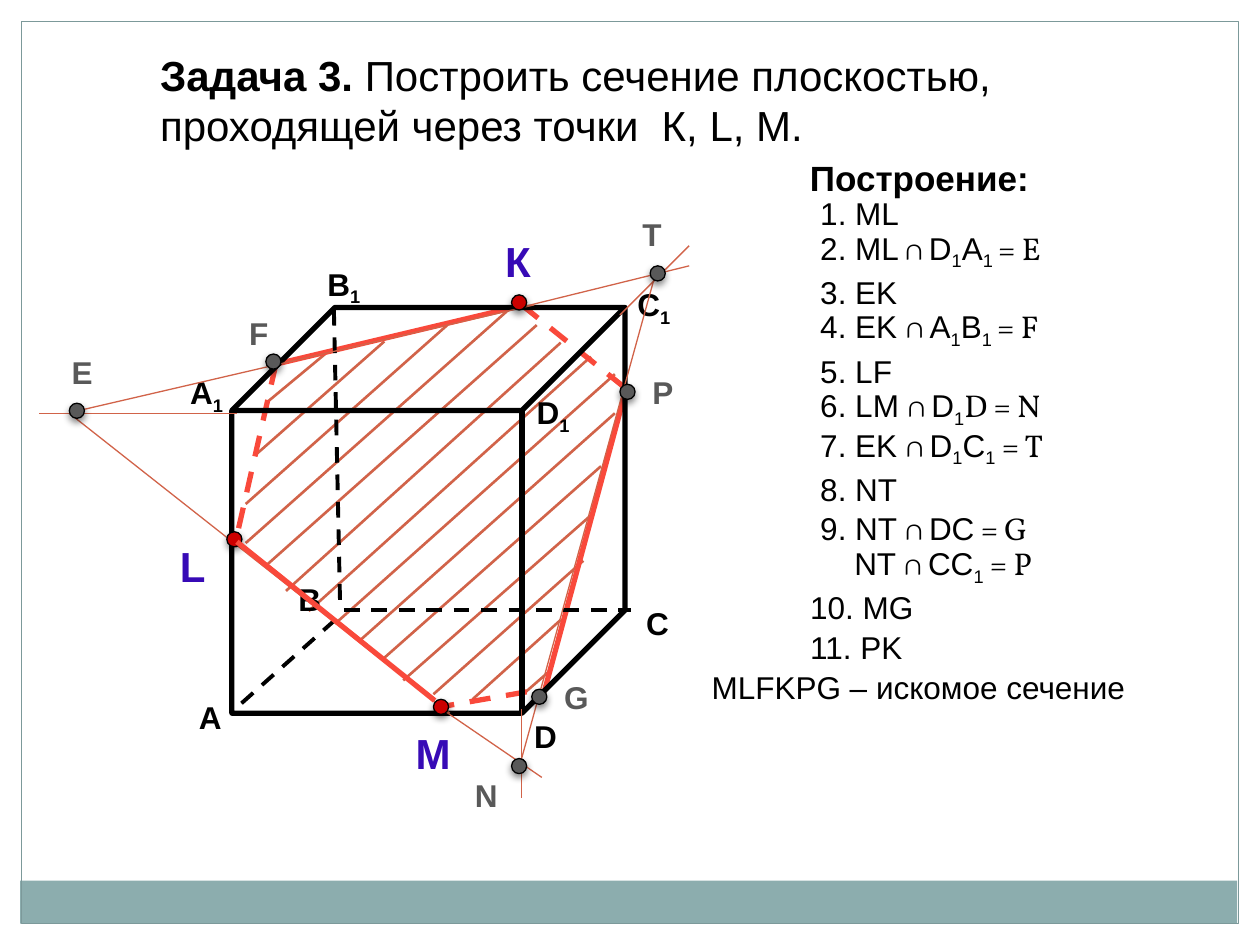
from lxml.etree import SubElement
from pptx import Presentation
from pptx.dml.color import RGBColor
from pptx.enum.dml import MSO_LINE
from pptx.enum.shapes import MSO_CONNECTOR, MSO_SHAPE
from pptx.enum.text import MSO_ANCHOR, MSO_AUTO_SIZE, PP_ALIGN
from pptx.oxml.ns import qn
from pptx.util import Inches, Pt

BLACK, GRAY, VIOLET = "000000", "595959", "370AB6"
RED, RUST, CRIMSON = "F9493B", "D16349", "CC0000"

HATCH = [
    (2.11, 3.2, 2.58, 2.81), (2.04, 3.6, 3.05, 2.71), (1.95, 4, 3.55, 2.58),
    (1.95, 4.31, 4.08, 2.42), (2.11, 4.49, 4.26, 2.58), (2.27, 4.69, 4.45, 2.72),
    (2.45, 4.85, 4.69, 2.83), (2.66, 4.95, 4.88, 2.97), (2.86, 5.08, 4.88, 3.28),
    (3.04, 5.23, 4.77, 3.7), (3.2, 5.4, 4.69, 4.09), (3.44, 5.51, 4.63, 4.45),
    (3.75, 5.55, 4.45, 4.92), (4.14, 5.52, 4.38, 5.31),
]
VISIBLE_SIDES = [(2.19, 2.89, 4.08, 2.44), (4.32, 5.49, 4.98, 3.05)]
HIDDEN_SIDES = [
    (3.44, 5.62, 4.3, 5.47), (2.19, 2.89, 1.86, 4.34), (4.14, 2.42, 5, 3.11),
]
HIDDEN_EDGES = [
    (2.65, 2.46, 2.7, 4.84), (2.73, 4.84, 5.01, 4.84), (2.66, 4.92, 1.84, 5.65),
]
EXTENSIONS = [
    (1.88, 3.28, 0.31, 3.28), (0.55, 3.28, 3.57, 5.66), (0.62, 3.26, 4.24, 2.42),
    (4.14, 5.63, 4.14, 6.33), (3.54, 5.65, 4.3, 6.17), (4.92, 2.5, 5.47, 1.95),
    (4.13, 2.44, 5.47, 2.11), (5.22, 2.11, 4.14, 6.02),
]
VERTICES = [
    ("А", 1.48, 5.47), ("D", 4.14, 5.62), ("В|_1", 2.5, 2.03), ("В", 2.27, 4.53),
    ("С", 5.03, 4.72), ("А|_1", 1.41, 2.89), ("C|_1", 4.96, 2.19), ("D|_1", 4.16, 3.05),
]
GIVEN_NAMES = [("К", 3.91, 1.8), ("L", 1.33, 4.22), ("М", 3.2, 5.7)]
FOUND_NAMES = [
    ("F", 1.88, 2.42), ("E", 0.47, 2.73), ("N", 3.67, 6.09),
    ("P", 5.08, 2.89), ("G", 4.38, 5.31), ("T", 5, 1.64),
]
GIVEN_DOTS = [(1.8, 4.22), (4.06, 2.34), (3.44, 5.55)]
FOUND_DOTS = [
    (4.06, 6.02), (5.16, 2.11), (0.55, 3.2), (2.11, 2.81), (4.92, 3.05), (4.22, 5.47),
]
STEPS = [
    ("1. ML", 0.08), ("2. ML|~ ∩ |D|_1|А|_1 |~= E", 0.08), ("3. EK", 0.08),
    ("4. EK |~∩ |А|_1|B|_1 |~= F", 0.08), ("5. LF", 0.08),
    ("6. LM |~∩ |D|_1|~D = N", 0.08), ("7. ЕK |~∩ |D|_1|C|_1|~ = T", 0.08),
    ("8. NT", 0.08), ("9. NT |~∩ |DC|~ = G", 0.08), ("NT |~∩ |CC|_1|~ = P", 0.35),
    ("10. MG", 0), ("11. PK", 0),
]


def rgb(value):
    """Turn a hex string into a colour."""
    return RGBColor.from_string(value)


class Drawing:
    """Holds the text style and the current slide."""

    font, math_font, size = "Arial", "Vollkorn", 18

    def __init__(self, slide):
        """Start drawing on a slide."""
        self.s = slide

    def runs(self, p, text, size=None, color=BLACK, bold=False):
        """Add runs split by |, where _ marks a subscript and ~ the math font."""
        for part in text.split("|"):
            r = p.add_run()
            r.text = part.lstrip("_~")
            r.font.size = Pt(size or self.size)
            r.font.bold = bold
            r.font.name = self.math_font if part.startswith("~") else self.font
            r.font.color.rgb = rgb(color)
            if part.startswith("_"):
                r.font._element.set("baseline", "-25000")

    def text(self, text, x, y, w, h, **style):
        """Add a text box with one paragraph."""
        tf = self.s.shapes.add_textbox(Inches(x), Inches(y), Inches(w), Inches(h)).text_frame
        tf.word_wrap = True
        tf.margin_top = Inches(0.07)
        self.runs(tf.paragraphs[0], text, **style)

    def holder(self, sp, x, y, w, h):
        """Move a placeholder and return its prepared text frame."""
        sp.left, sp.top, sp.width, sp.height = (Inches(v) for v in (x, y, w, h))
        tf = sp.text_frame
        tf.word_wrap = True
        tf.auto_size = MSO_AUTO_SIZE.NONE
        tf.vertical_anchor = MSO_ANCHOR.TOP
        return tf

    def title(self, lead, rest, *box):
        """Fill the title with a bold lead and a plain remainder."""
        tf = self.holder(self.s.shapes.title, *box)
        tf.margin_top = Inches(0.08)
        p = tf.paragraphs[0]
        p.alignment = PP_ALIGN.LEFT
        self.runs(p, lead, size=24, bold=True)
        self.runs(p, rest, size=24)

    def steps(self, items, *box):
        """Fill the body with evenly spaced steps."""
        tf = self.holder(self.s.placeholders[1], *box)
        for i, (text, indent) in enumerate(items):
            p = tf.add_paragraph() if i else tf.paragraphs[0]
            p.space_before = Pt(0)
            p.line_spacing = Pt(22.5)
            pPr = p._p.get_or_add_pPr()
            pPr.set("marL", str(Inches(indent)))
            pPr.set("indent", "0")
            SubElement(pPr, qn("a:buNone"))
            self.runs(p, text)

    def shape(self, kind, x, y, w, h, fill=None, line=None, width=0.75):
        """Add a preset shape."""
        sp = self.s.shapes.add_shape(kind, Inches(x), Inches(y), Inches(w), Inches(h))
        sp.shadow.inherit = False
        if fill:
            sp.fill.solid()
            sp.fill.fore_color.rgb = rgb(fill)
        else:
            sp.fill.background()
        if line:
            sp.line.color.rgb = rgb(line)
            sp.line.width = Pt(width)
        else:
            sp.line.fill.background()
        return sp

    def dot(self, x, y, fill):
        """Add a point with a soft shadow below it."""
        sp = self.shape(MSO_SHAPE.OVAL, x, y, 0.12, 0.12, fill, BLACK)
        effects = sp._element.spPr.find(qn("a:effectLst"))
        shadow = SubElement(effects, qn("a:outerShdw"), blurRad=str(Pt(4)),
                            dist=str(Pt(2)), dir="5400000", rotWithShape="0")
        color = SubElement(shadow, qn("a:srgbClr"), val=BLACK)
        SubElement(color, qn("a:alpha"), val="45000")

    def lines(self, ends, color, width, dashed=False):
        """Add straight lines in one style."""
        for end in ends:
            c = self.s.shapes.add_connector(MSO_CONNECTOR.STRAIGHT, *(Inches(v) for v in end))
            c.line.color.rgb = rgb(color)
            c.line.width = Pt(width)
            if dashed:
                c.line.dash_style = MSO_LINE.DASH
            SubElement(c._element.spPr, qn("a:effectLst"))


def main():
    """Build the slide."""
    prs = Presentation()
    prs.slide_width, prs.slide_height = Inches(10), Inches(7.5)
    d = Drawing(prs.slides.add_slide(prs.slide_layouts[1]))

    d.shape(MSO_SHAPE.RECTANGLE, 0.16, 6.99, 9.66, 0.34, fill="8CADAE")
    d.shape(MSO_SHAPE.RECTANGLE, 0.17, 0.17, 9.66, 7.16, line="7C999A")
    d.title("Задача 3. ", "Построить сечение плоскостью, проходящей через точки  К, L, М.",
            1.17, 0.31, 8.2, 0.91)
    d.text("Построение:", 6.33, 1.17, 2.34, 0.44, size=20, bold=True)
    d.steps(STEPS, 6.33, 1.48, 3.1, 3.85)
    d.text("МLFKPG – искомое сечение", 5.55, 5.23, 4.06, 0.4)

    d.lines(HATCH, RUST, 1.5)
    d.lines(VISIBLE_SIDES, RED, 3)
    d.lines(HIDDEN_SIDES, RED, 3, dashed=True)
    cube = d.shape(MSO_SHAPE.CUBE, 1.84, 2.44, 3.12, 3.22, line=BLACK, width=3)
    cube.adjustments[0] = 0.262
    d.lines(HIDDEN_EDGES, BLACK, 2.25, dashed=True)
    for name, x, y in VERTICES:
        d.text(name, x, y, 0.51 if "_" in name else 0.36, 0.31, bold=True)
    for name, x, y in GIVEN_NAMES:
        d.text(name, x, y, 0.62, 0.51, size=24, color=VIOLET, bold=True)

    d.lines(EXTENSIONS, RUST, 0.75)
    for dots, color in ((FOUND_DOTS, GRAY), (GIVEN_DOTS, CRIMSON)):
        for x, y in dots:
            d.dot(x, y, color)
    for name, x, y in FOUND_NAMES:
        d.text(name, x, y, 0.4, 0.4, color=GRAY, bold=True)
    d.lines([(1.88, 4.3, 3.45, 5.56)], RED, 3)
    prs.save("out.pptx")


if __name__ == "__main__":
    main()
